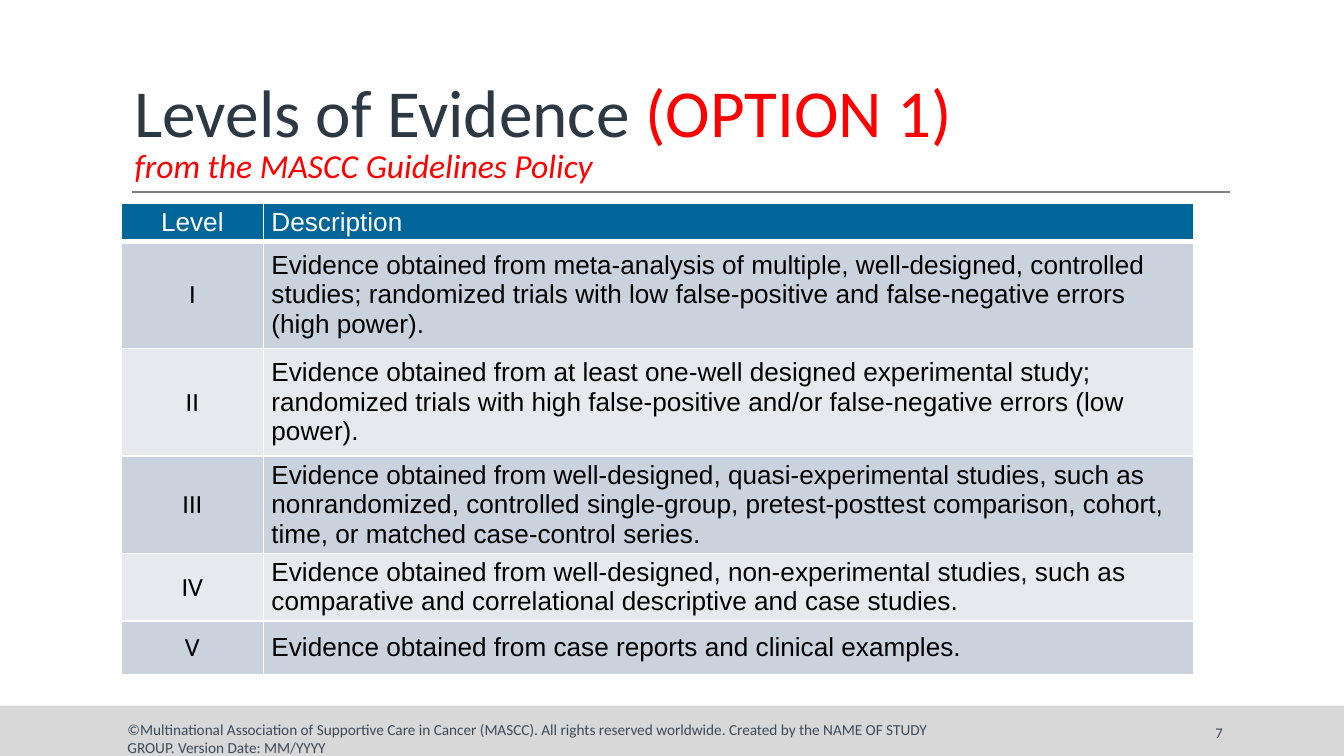
from lxml import etree
from pptx import Presentation
from pptx.dml.color import RGBColor
from pptx.enum.shapes import MSO_CONNECTOR, MSO_SHAPE
from pptx.enum.text import MSO_ANCHOR, MSO_AUTO_SIZE, PP_ALIGN
from pptx.oxml.ns import qn
from pptx.util import Cm, Pt

LEFT, CENTER, RIGHT = PP_ALIGN.LEFT, PP_ALIGN.CENTER, PP_ALIGN.RIGHT
TOP, MIDDLE, BOTTOM = MSO_ANCHOR.TOP, MSO_ANCHOR.MIDDLE, MSO_ANCHOR.BOTTOM
NO_AUTOFIT = MSO_AUTO_SIZE.NONE
RECTANGLE, STRAIGHT = MSO_SHAPE.RECTANGLE, MSO_CONNECTOR.STRAIGHT
TITLE_ONLY = 5

COLORS = {
    "title": "2C3843", "option": "FF0000", "footer": "3D4A59",
    "footer_band": "D8D8D8", "rule": "7F7F7F", "header": "006699",
    "odd_row": "CAD2DD", "even_row": "E6EAEF",
    "white": "FFFFFF", "black": "000000",
}

LEVELS = [
    ("Level", "Description"),
    ("I", "Evidence obtained from meta-analysis of multiple, well-designed, controlled "
          "studies; randomized trials with low false-positive and false-negative errors "
          "(high power)."),
    ("II", "Evidence obtained from at least one-well designed experimental study; "
           "randomized trials with high false-positive and/or false-negative errors "
           "(low power)."),
    ("III", "Evidence obtained from well-designed, quasi-experimental studies, such as "
            "nonrandomized, controlled single-group, pretest-posttest comparison, cohort, "
            "time, or matched case-control series."),
    ("IV", "Evidence obtained from well-designed, non-experimental studies, such as "
           "comparative and correlational descriptive and case studies."),
    ("V", "Evidence obtained from case reports and clinical examples."),
]
COLUMN_WIDTHS = [2.69, 17.58]
ROW_HEIGHTS = [0.71, 2.03, 2.03, 1.85, 1.27, 1.02]


def color(name):
    return RGBColor.from_string(COLORS[name])


class SlideBuilder:
    """Holds the style and the current slide."""

    def __init__(self, slide, heading_font="Calibri", body_font="Arial"):
        self.slide = slide
        self.heading_font = heading_font
        self.body_font = body_font

    def format_font(self, font, name, size, color_name):
        font.name = name
        font.size = Pt(size)
        font.color.rgb = color(color_name)

    def band(self, left, top, width, height, fill):
        shape = self.slide.shapes.add_shape(
            RECTANGLE, Cm(left), Cm(top), Cm(width), Cm(height))
        shape.shadow.inherit = False
        shape.fill.solid()
        shape.fill.fore_color.rgb = color(fill)
        shape.line.fill.background()

    def rule(self, left, right, y, line_color, width):
        connector = self.slide.shapes.add_connector(
            STRAIGHT, Cm(left), Cm(y), Cm(right), Cm(y))
        connector.line.color.rgb = color(line_color)
        connector.line.width = Pt(width)
        etree.SubElement(connector._element.spPr, qn("a:effectLst"))

    def title(self, left, top, width, height, main, option, subtitle):
        shape = self.slide.shapes.title
        shape.left, shape.top = Cm(left), Cm(top)
        shape.width, shape.height = Cm(width), Cm(height)
        frame = shape.text_frame
        frame.auto_size = NO_AUTOFIT
        frame.vertical_anchor = BOTTOM
        paragraph = frame.paragraphs[0]
        paragraph.alignment = LEFT
        paragraph.line_spacing = 0.85
        for text, size, color_name in ((main, 36, "title"), (option, 36, "option"),
                                       (subtitle, 18, "option")):
            if text == subtitle:
                paragraph.add_line_break()
            run = paragraph.add_run()
            run.text = text
            self.format_font(run.font, self.heading_font, size, color_name)
            run.font.italic = text == subtitle

    def text(self, left, top, width, height, text, size, alignment=LEFT, anchor=TOP):
        box = self.slide.shapes.add_textbox(Cm(left), Cm(top), Cm(width), Cm(height))
        frame = box.text_frame
        frame.word_wrap = True
        frame.vertical_anchor = anchor
        paragraph = frame.paragraphs[0]
        paragraph.text = text
        paragraph.alignment = alignment
        self.format_font(paragraph.font, self.heading_font, size, "footer")

    def cell_borders(self, cell, bottom_width):
        properties = cell._tc.get_or_add_tcPr()
        for side, width in (("L", 1), ("R", 1), ("T", 1), ("B", bottom_width)):
            line = etree.SubElement(properties, qn(f"a:ln{side}"), w=str(Pt(width)))
            fill = etree.SubElement(line, qn("a:solidFill"))
            etree.SubElement(fill, qn("a:srgbClr"), val=COLORS["white"])

    def table(self, left, top, rows, column_widths, row_heights):
        table = self.slide.shapes.add_table(
            len(rows), len(column_widths), Cm(left), Cm(top),
            Cm(sum(column_widths)), Cm(sum(row_heights))).table
        for column, width in zip(table.columns, column_widths):
            column.width = Cm(width)
        for row, height in zip(table.rows, row_heights):
            row.height = Cm(height)
        for row_index, texts in enumerate(rows):
            is_header = row_index == 0
            fill = "header" if is_header else "odd_row" if row_index % 2 else "even_row"
            for column_index, text in enumerate(texts):
                is_level = column_index == 0
                cell = table.cell(row_index, column_index)
                self.cell_borders(cell, 3 if is_header else 1)
                cell.fill.solid()
                cell.fill.fore_color.rgb = color(fill)
                cell.vertical_anchor = MIDDLE
                cell.margin_left = cell.margin_right = Cm(0.15)
                cell.margin_top = cell.margin_bottom = Cm(0.08)
                paragraph = cell.text_frame.paragraphs[0]
                paragraph.text = text
                paragraph.alignment = CENTER if is_level else LEFT
                font_name = (self.heading_font if is_level and not is_header
                             else self.body_font)
                self.format_font(paragraph.font, font_name, 14,
                                 "white" if is_header else "black")


def main():
    presentation = Presentation()
    presentation.slide_width, presentation.slide_height = Cm(25.4), Cm(14.29)
    slide = presentation.slides.add_slide(presentation.slide_layouts[TITLE_ONLY])
    builder = SlideBuilder(slide)

    # Title and rule
    builder.rule(2.49, 23.24, 3.63, "rule", 0.75)
    builder.title(2.29, 0.61, 20.95, 3.02, "Levels of Evidence ", "(OPTION 1)",
                  "from the MASCC Guidelines Policy")

    # Levels of evidence
    builder.table(2.29, 3.84, LEVELS, COLUMN_WIDTHS, ROW_HEIGHTS)

    # Footer
    builder.band(0, 13.34, 25.4, 0.95, "footer_band")
    builder.text(20.62, 13.46, 2.74, 0.76, "7", 7.9, RIGHT, MIDDLE)
    builder.text(2.16, 13.49, 16.48, 0.76,
                 "©Multinational Association of Supportive Care in Cancer (MASCC). "
                 "All rights reserved worldwide. Created by the NAME OF STUDY GROUP. "
                 "Version Date: MM/YYYY", 8.2)

    presentation.save("out.pptx")


if __name__ == "__main__":
    main()
